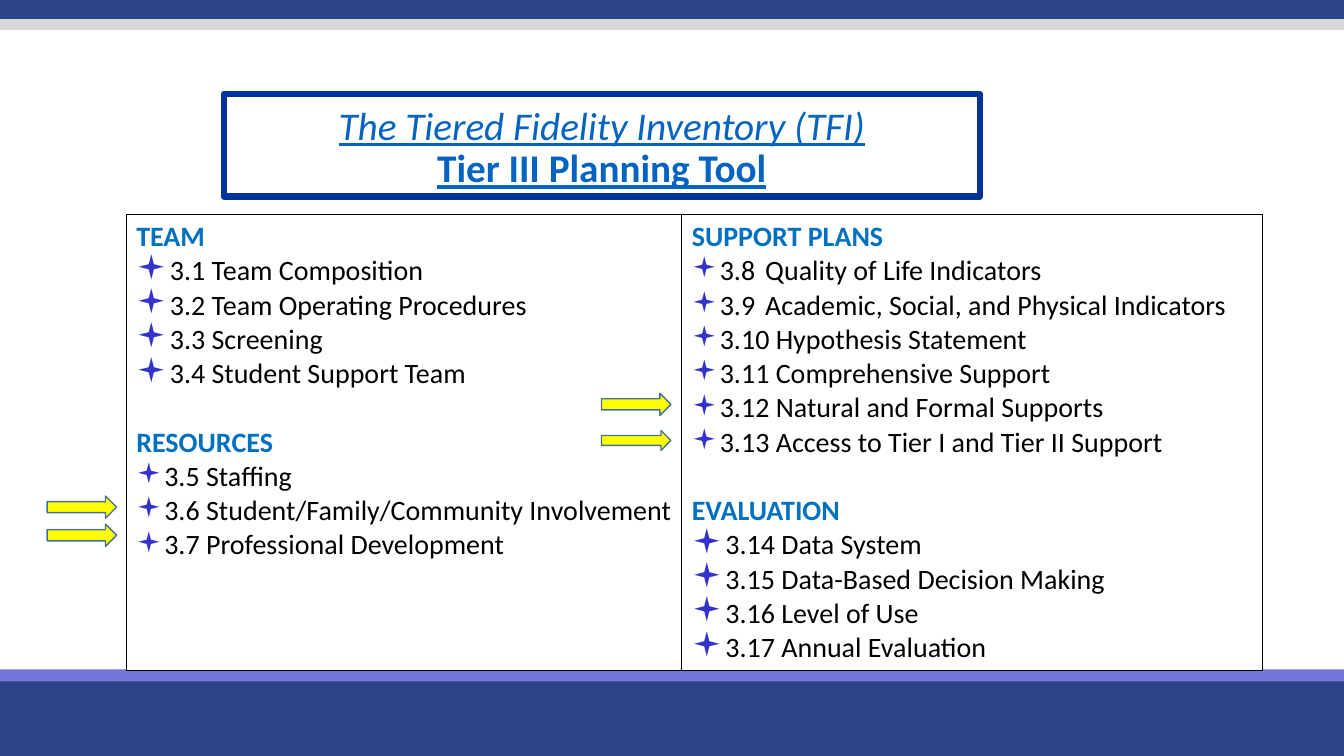
from lxml import etree
from pptx import Presentation
from pptx.dml.color import RGBColor
from pptx.enum.shapes import MSO_SHAPE
from pptx.enum.text import MSO_ANCHOR, MSO_AUTO_SIZE, PP_ALIGN
from pptx.oxml.ns import qn
from pptx.util import Cm, Pt

RECTANGLE, ARROW = MSO_SHAPE.RECTANGLE, MSO_SHAPE.RIGHT_ARROW
FONT = "Calibri"
LINE_HEIGHT = Pt(24.4)
COLORS = {
    "navy": "2E4488", "grey": "D9D9D9", "violet": "7476DA",
    "yellow": "FFFF00", "arrow edge": "42719B", "white": "FFFFFF",
    "title edge": "003399", "title": "0563C1", "heading": "0070C0",
    "bullet": "3333CC", "black": "000000",
}


def color(name):
    return RGBColor.from_string(COLORS[name])


def add_bullet(para, percent):
    """Give the paragraph a hanging square bullet and a tab stop after its number."""
    props = para._p.get_or_add_pPr()
    props.set("marL", str(Cm(0.48)))
    props.set("indent", str(-Cm(0.48)))
    bullet_color = etree.SubElement(props, qn("a:buClr"))
    etree.SubElement(bullet_color, qn("a:srgbClr"), val=COLORS["bullet"])
    etree.SubElement(props, qn("a:buSzPct"), val=str(percent * 1000))
    etree.SubElement(props, qn("a:buFont"), typeface="Wingdings")
    etree.SubElement(props, qn("a:buChar"), char="▪")
    if "\t" in para.text:
        tabs = etree.SubElement(props, qn("a:tabLst"))
        etree.SubElement(tabs, qn("a:tab"), pos=str(Cm(1.85)), algn="l")


deck = Presentation()
deck.slide_width, deck.slide_height = Cm(33.87), Cm(19.05)
page = deck.slides.add_slide(deck.slide_layouts[5])

# Bands across the page
bands = [("navy", 0, 0.48), ("grey", 0.48, 0.28),
         ("navy", 17.02, 2.03), ("violet", 16.87, 0.3)]
for name, top, height in bands:
    band = page.shapes.add_shape(RECTANGLE, 0, Cm(top), deck.slide_width, Cm(height))
    band.shadow.inherit = False
    band.fill.solid()
    band.fill.fore_color.rgb = color(name)
    band.line.fill.background()

# Title
title = page.shapes.title
title.left, title.top, title.width, title.height = Cm(5.64), Cm(2.36), Cm(19.05), Cm(2.59)
title.fill.solid()
title.fill.fore_color.rgb = color("white")
title.line.color.rgb = color("title edge")
title.line.width = Pt(4.5)
frame = title.text_frame
frame.auto_size = MSO_AUTO_SIZE.NONE
frame.word_wrap = True
frame.vertical_anchor = MSO_ANCHOR.BOTTOM
para = frame.paragraphs[0]
para.alignment = PP_ALIGN.CENTER
para.line_spacing = 0.9
para.font.name, para.font.size = FONT, Pt(28)
para.font.underline = True
para.font.color.rgb = color("title")
span = para.add_run()
span.text = "The Tiered Fidelity Inventory (TFI)"
span.font.italic = True
para.add_line_break()
span = para.add_run()
span.text = "Tier III Planning Tool"
span.font.bold = True

# Table: each cell holds sections of (heading, bullet size in percent, items)
columns = [
    (14, [
        ("TEAM", 120, ["3.1 Team Composition", "3.2 Team Operating Procedures",
                       "3.3 Screening", "3.4 Student Support Team"]),
        ("RESOURCES", 100, ["3.5 Staffing", "3.6 Student/Family/Community Involvement",
                            "3.7 Professional Development"]),
    ]),
    (14.63, [
        ("SUPPORT PLANS", 100, ["3.8\tQuality of Life Indicators",
                                "3.9\tAcademic, Social, and Physical Indicators",
                                "3.10 Hypothesis Statement", "3.11 Comprehensive Support",
                                "3.12 Natural and Formal Supports",
                                "3.13 Access to Tier I and Tier II Support"]),
        ("EVALUATION", 120, ["3.14 Data System", "3.15 Data-Based Decision Making",
                             "3.16 Level of Use", "3.17 Annual Evaluation"]),
    ]),
]
table = page.shapes.add_table(1, 2, Cm(3.18), Cm(5.41), Cm(28.63), Cm(11.4)).table
table.first_row = table.horz_banding = False
for index, (width, sections) in enumerate(columns):
    table.columns[index].width = Cm(width)
    cell = table.cell(0, index)
    cell.fill.solid()
    cell.fill.fore_color.rgb = color("white")
    for position, side in enumerate(["lnL", "lnR", "lnT", "lnB"]):
        border = etree.Element(qn("a:" + side), w=str(Pt(1)))
        fill = etree.SubElement(border, qn("a:solidFill"))
        etree.SubElement(fill, qn("a:srgbClr"), val=COLORS["black"])
        cell._tc.get_or_add_tcPr().insert(position, border)

    frame = cell.text_frame
    for number, (heading, percent, items) in enumerate(sections):
        for text in [heading, *items]:
            is_heading = text == heading
            is_first = is_heading and number == 0
            para = frame.paragraphs[0] if is_first else frame.add_paragraph()
            para.text = text
            if is_heading and not is_first:
                para.space_before = LINE_HEIGHT
            if not is_heading:
                add_bullet(para, percent)
            para.font.name, para.font.size = FONT, Pt(20)
            para.font.bold = is_heading
            para.font.color.rgb = color("heading" if is_heading else "black")

# Arrows pointing at the highlighted items
for left, top, height in [(1.19, 12.5, 0.56), (1.19, 13.21, 0.56),
                          (15.16, 9.91, 0.56), (15.16, 10.85, 0.5)]:
    arrow = page.shapes.add_shape(ARROW, Cm(left), Cm(top), Cm(1.75), Cm(height))
    arrow.shadow.inherit = False
    arrow.fill.solid()
    arrow.fill.fore_color.rgb = color("yellow")
    arrow.line.color.rgb = color("arrow edge")
    arrow.line.width = Pt(1)

deck.save("out.pptx")
